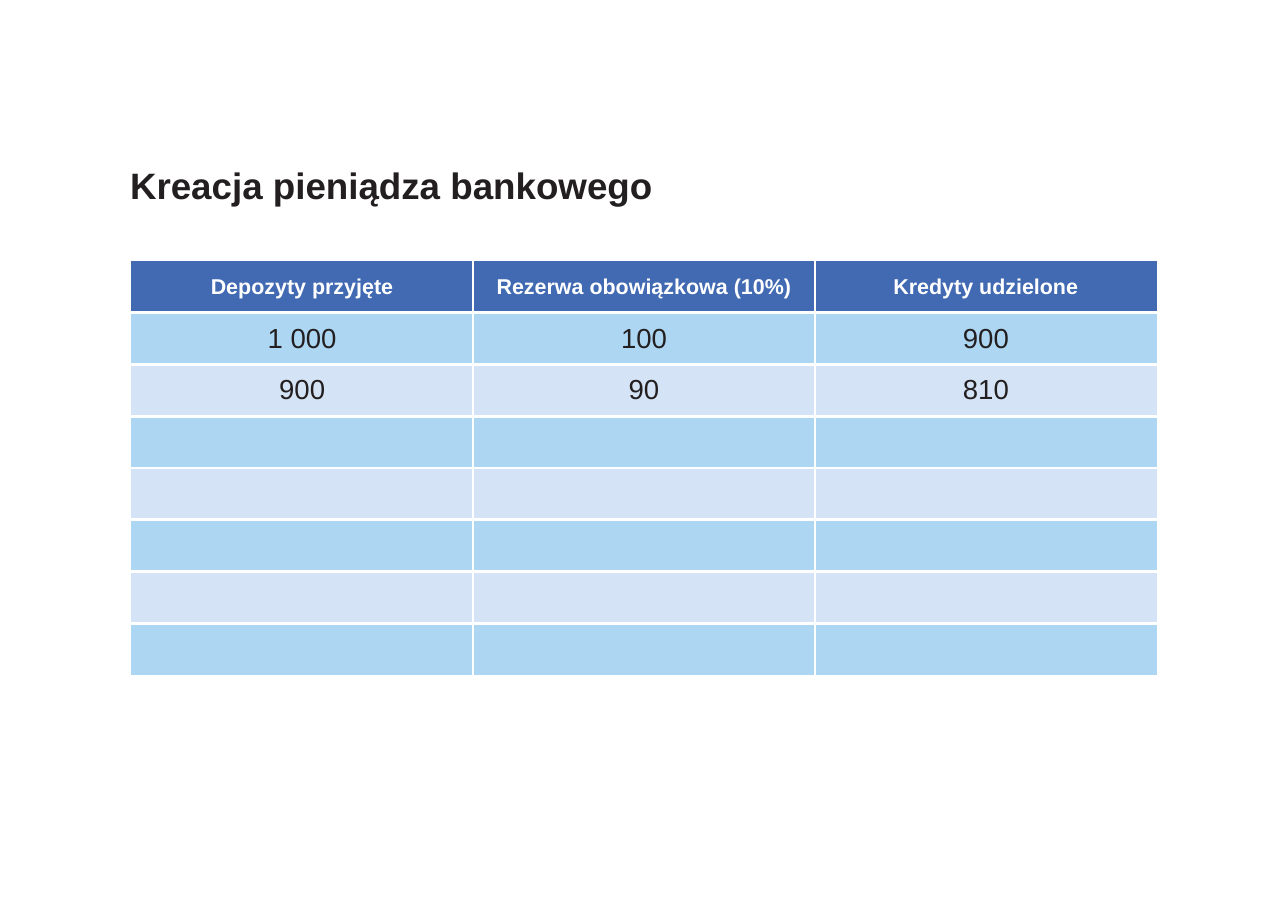
from lxml.etree import SubElement
from pptx import Presentation
from pptx.dml.color import RGBColor
from pptx.enum.text import MSO_ANCHOR as Anchor, PP_ALIGN as Align
from pptx.oxml.ns import qn
from pptx.util import Inches, Pt

FONT = "Arial"
INK, WHITE = "231F20", "FFFFFF"
HEADER_BLUE = "426AB3"
BAND_COLORS = ("ACD6F2", "D4E3F5")
BORDER_POINTS = 2

HEADERS = ("Depozyty przyjęte", "Rezerwa obowiązkowa (10%)", "Kredyty udzielone")
VALUES = (("1 000", "100", "900"), ("900", "90", "810"))
EMPTY_ROWS = 5


def color(hex_string):
    return RGBColor.from_string(hex_string)


def write_text(frame, text, size=18, bold=False, ink=INK, align=Align.LEFT):
    paragraph = frame.paragraphs[0]
    paragraph.alignment = align
    run = paragraph.add_run()
    run.text = text
    run.font.name = FONT
    run.font.size = Pt(size)
    run.font.bold = bold
    run.font.color.rgb = color(ink)


def set_borders(cell, visible_sides):
    """Draw white lines on the visible sides (L, R, T, B) and none on the others."""
    properties = cell._tc.get_or_add_tcPr()
    for side in "LRTB":
        line = SubElement(properties, qn(f"a:ln{side}"), w=str(Pt(BORDER_POINTS)))
        if side in visible_sides:
            fill = SubElement(line, qn("a:solidFill"))
            SubElement(fill, qn("a:srgbClr"), val=WHITE)
        else:
            SubElement(line, qn("a:noFill"))


def add_title(slide, left, top, width, height):
    box = slide.shapes.add_textbox(Inches(left), Inches(top), Inches(width), Inches(height))
    frame = box.text_frame
    frame.word_wrap = True
    frame.margin_left = frame.margin_right = frame.margin_top = frame.margin_bottom = 0
    write_text(frame, "Kreacja pieniądza bankowego", size=24, bold=True)


def add_money_table(slide, left, top, width, height):
    rows = [HEADERS, *VALUES] + [("",) * len(HEADERS)] * EMPTY_ROWS
    last_row, last_column = len(rows) - 1, len(HEADERS) - 1
    table = slide.shapes.add_table(
        len(rows), len(HEADERS), Inches(left), Inches(top), Inches(width), Inches(height)
    ).table
    table.horz_banding = False

    for row, texts in enumerate(rows):
        for column, text in enumerate(texts):
            cell = table.cell(row, column)
            cell.margin_left = cell.margin_right = cell.margin_top = cell.margin_bottom = 0
            cell.vertical_anchor = Anchor.MIDDLE
            inner_sides = (
                ("L" if column > 0 else "")
                + ("R" if column < last_column else "")
                + ("T" if row > 0 else "")
                + ("B" if row < last_row else "")
            )
            set_borders(cell, inner_sides)
            cell.fill.solid()
            is_header = row == 0
            background = HEADER_BLUE if is_header else BAND_COLORS[(row - 1) % 2]
            cell.fill.fore_color.rgb = color(background)
            if text:
                write_text(
                    cell.text_frame, text, size=14 if is_header else 18, bold=is_header,
                    ink=WHITE if is_header else INK, align=Align.CENTER,
                )


def main():
    presentation = Presentation()
    presentation.slide_width, presentation.slide_height = Inches(11.69), Inches(8.27)
    slide = presentation.slides.add_slide(presentation.slide_layouts[6])
    add_title(slide, 1.18, 1.48, 9.35, 0.41)
    add_money_table(slide, 1.19, 2.37, 9.31, 3.76)
    presentation.save("out.pptx")


if __name__ == "__main__":
    main()
